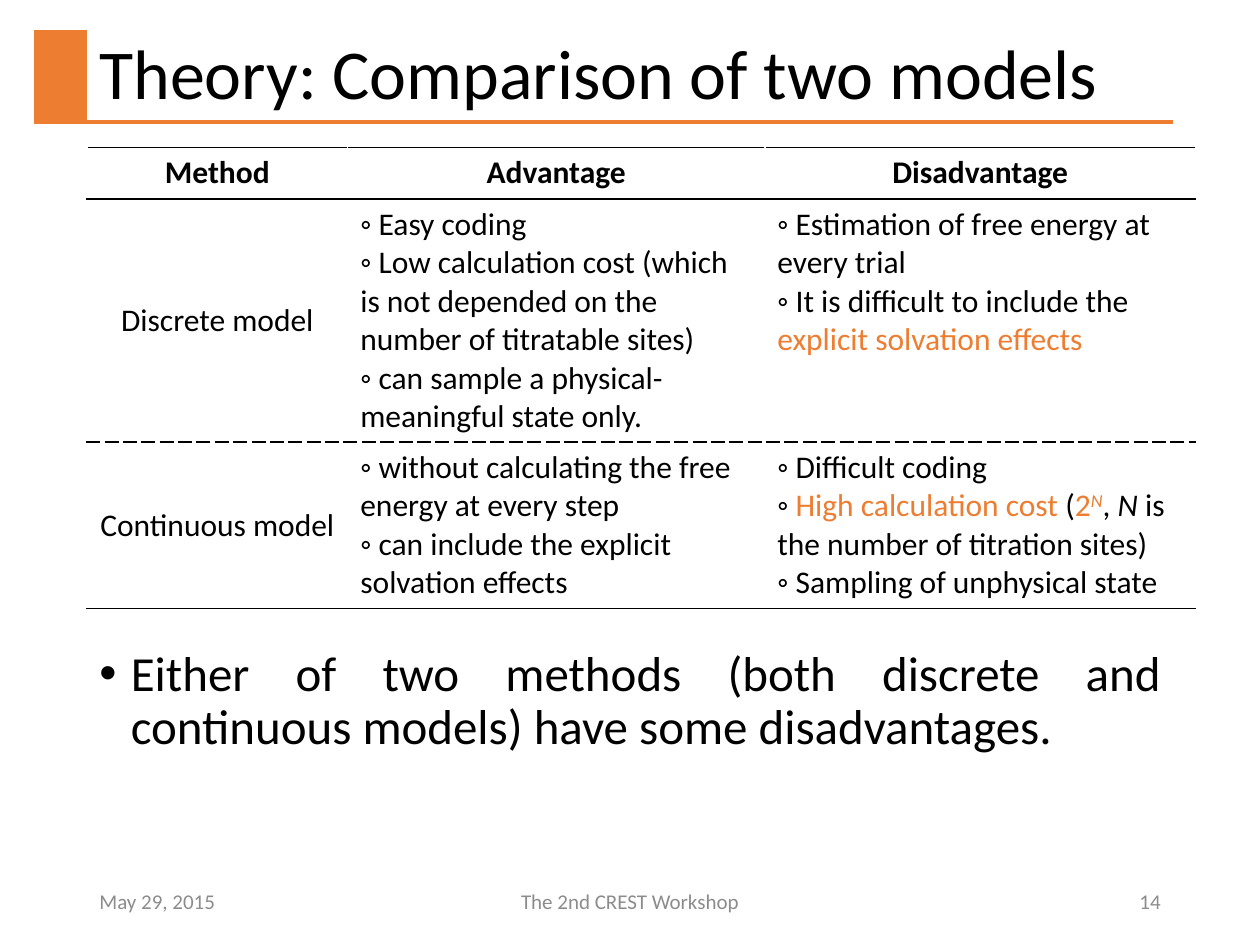
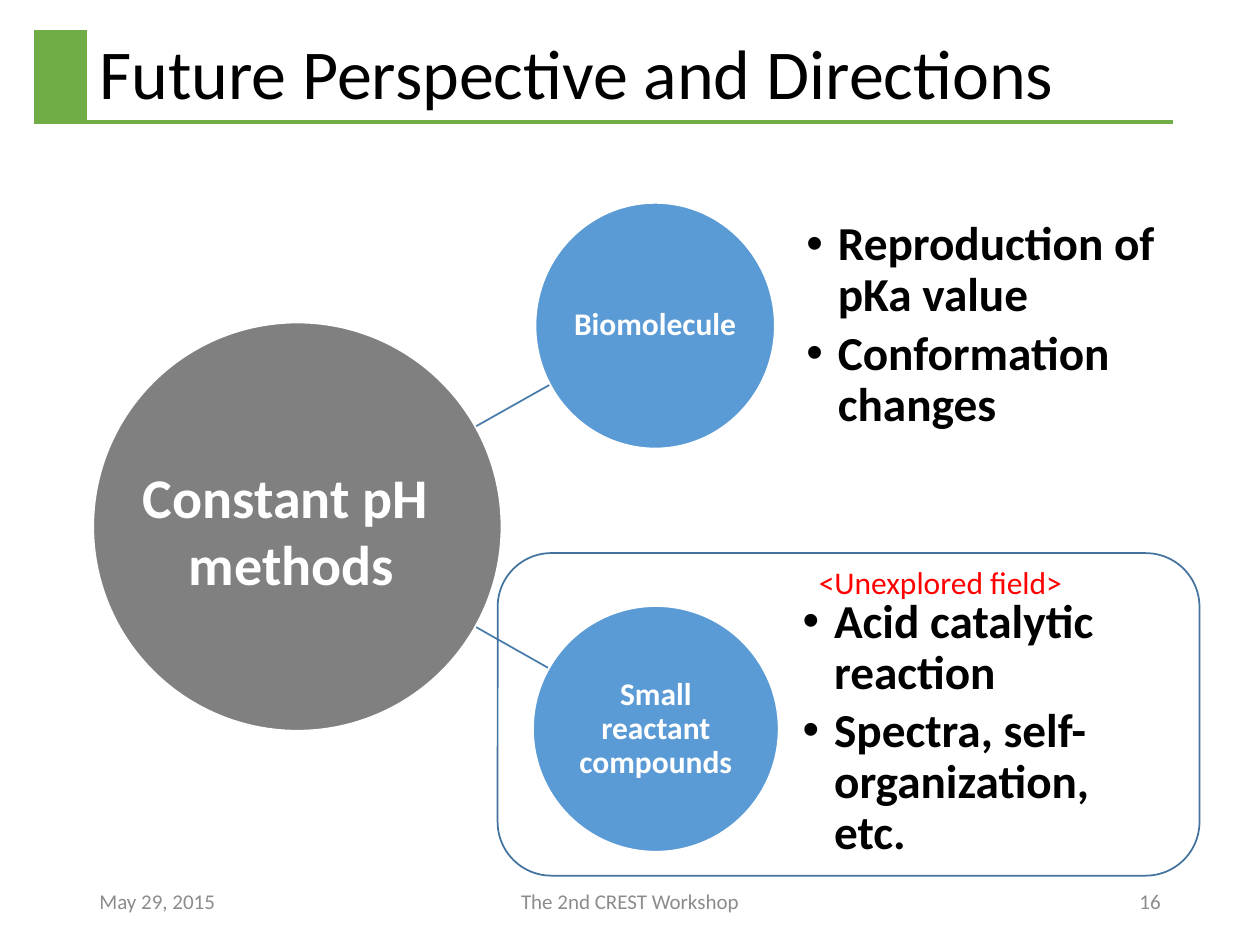
import pptx
import pptx.util
import pptx.dml.color
import pptx.enum.dml
import pptx.enum.shapes
import pptx.enum.text
import pptx.oxml.ns
import lxml.etree

Inches, Pt = pptx.util.Inches, pptx.util.Pt
SHAPE = pptx.enum.shapes.MSO_SHAPE
ALIGN = pptx.enum.text.PP_ALIGN
ANCHOR = pptx.enum.text.MSO_ANCHOR

FONT = "Calibri"
BLACK, WHITE, GREY, RED = "000000", "FFFFFF", "808080", "FF0000"
ORANGE, GREEN, BLUE = "ED7D31", "70AD47", "5B9BD5"
LINK, FRAME, FAINT = "497CAB", "43739E", "8C8C8C"
LEFT, WIDTH = 0.69, 8.62


def color(code):
    return pptx.dml.color.RGBColor.from_string(code)


def child(parent, tag, **attrs):
    node = lxml.etree.SubElement(parent, pptx.oxml.ns.qn(tag))
    for key, value in attrs.items():
        node.set(key, str(value))
    return node


def write(frame, paras, size=18, ink=BLACK, bold=False, align=ALIGN.LEFT,
          anchor=ANCHOR.TOP, inset=None, bullet=False, line=1.0,
          before=0, after=0, wrap=True):
    """Fill a text frame; a paragraph is a string or a list of (text, format) runs."""
    frame.word_wrap = wrap
    frame.vertical_anchor = anchor
    if inset is not None:
        frame.margin_left = frame.margin_right = Inches(inset)
        frame.margin_top = frame.margin_bottom = Inches(inset)
    for i, runs in enumerate(paras):
        para = frame.add_paragraph() if i else frame.paragraphs[0]
        para.alignment = align
        para.line_spacing = line
        para.space_before, para.space_after = Pt(before), Pt(after)
        if bullet:
            props = para._p.get_or_add_pPr()
            props.set("marL", str(Inches(0.25)))
            props.set("indent", str(-Inches(0.25)))
            child(props, "a:buFont", typeface="Arial")
            child(props, "a:buChar", char="•")
        for words, style in [(runs, {})] if isinstance(runs, str) else runs:
            run = para.add_run()
            run.text = words
            font = run.font
            font.name, font.size, font.bold = FONT, Pt(size), bold
            font.italic = style.get("italic", False)
            font.color.rgb = color(style.get("ink", ink))
            if "raised" in style:
                run._r.get_or_add_rPr().set("baseline", str(style["raised"] * 1000))


def text(slide, box, paras, **style):
    label = slide.shapes.add_textbox(*map(Inches, box))
    write(label.text_frame, paras, **style)


def shape(slide, kind, box, fill=None, edge=None):
    item = slide.shapes.add_shape(kind, *map(Inches, box))
    item.shadow.inherit = False
    if fill:
        item.fill.solid()
        item.fill.fore_color.rgb = color(fill)
    else:
        item.fill.background()
    if edge:
        item.line.color.rgb = color(edge)
        item.line.width = Pt(1)
    else:
        item.line.fill.background()
    return item


def rule(slide, start, end, ink, weight):
    item = slide.shapes.add_connector(
        pptx.enum.shapes.MSO_CONNECTOR.STRAIGHT, *map(Inches, start + end))
    item.line.color.rgb = color(ink)
    item.line.width = Pt(weight)
    child(item._element.spPr, "a:effectLst")


def base(deck, title, number, accent):
    """Title with its accent band, and the footer line."""
    slide = deck.slides.add_slide(deck.slide_layouts[6])
    top, high = 0.24, 0.74
    text(slide, (LEFT, top, WIDTH, high), [title], size=40,
         anchor=ANCHOR.MIDDLE, line=0.9)
    shape(slide, SHAPE.RECTANGLE, (0.27, top, 0.42, high), accent)
    rule(slide, (0.27, 0.97), (LEFT + WIDTH, 0.97), accent, 2)
    for left, wide, words, align in (
            (LEFT, 2.25, "May 29, 2015", ALIGN.LEFT),
            (3.31, 3.38, "The 2nd CREST Workshop", ALIGN.CENTER),
            (7.06, 2.25, number, ALIGN.RIGHT)):
        text(slide, (left, 6.95, wide, 0.4), [words], size=12, ink=FAINT,
             align=align, anchor=ANCHOR.MIDDLE)
    return slide


def border(cell, top, bottom):
    """White sides, black top and bottom in the given dash styles."""
    props = cell._tc.get_or_add_tcPr()
    sides = (("a:lnL", WHITE, "solid"), ("a:lnR", WHITE, "solid"),
             ("a:lnT", BLACK, top), ("a:lnB", BLACK, bottom))
    for tag, ink, dash in sides:
        edge = child(props, tag, w=Pt(1))
        child(child(edge, "a:solidFill"), "a:srgbClr", val=ink)
        child(edge, "a:prstDash", val=dash)


def matrix(slide, box, widths, heights, rows):
    """Table with a bold header and a centred first column."""
    grid = slide.shapes.add_table(len(rows), len(widths), *map(Inches, box)).table
    grid.first_row = grid.horz_banding = False
    for column, wide in zip(grid.columns, widths):
        column.width = Inches(wide)
    dashes = ["solid", "solid", "lgDash", "solid"]
    for r, row in enumerate(rows):
        grid.rows[r].height = Inches(heights[r])
        for c, paras in enumerate(row):
            cell = grid.cell(r, c)
            head, side = r == 0, c == 0
            write(cell.text_frame, paras, bold=head,
                  align=ALIGN.CENTER if head or side else ALIGN.LEFT)
            cell.vertical_anchor = ANCHOR.MIDDLE if side and not head else ANCHOR.TOP
            border(cell, dashes[r], dashes[r + 1])
            cell.fill.background()


def models(deck):
    slide = base(deck, "Theory: Comparison of two models", "14", ORANGE)
    hot, slant = {"ink": ORANGE}, {"italic": True}
    rows = [
        [["Method"], ["Advantage"], ["Disadvantage"]],
        [["Discrete model"],
         ["◦ Easy coding",
          "◦ Low calculation cost (which is not depended on the number of titratable sites)",
          "◦ can sample a physical-meaningful state only."],
         ["◦ Estimation of free energy at every trial",
          [("◦ It is difficult to include the ", {}),
           ("explicit solvation effects", hot)]]],
        [["Continuous model"],
         ["◦ without calculating the free energy at every step",
          "◦ can include the explicit solvation effects"],
         ["◦ Difficult coding",
          [("◦ ", {}), ("High calculation cost ", hot), ("(", {}), ("2", hot),
           ("N", {"ink": ORANGE, "italic": True, "raised": 30}), (", ", {}),
           ("N", slant), (" is the number of titration sites)", {})],
          "◦ Sampling of unphysical state"]],
    ]
    matrix(slide, (LEFT, 1.17, 8.8, 3.66), (2.07, 3.31, 3.42),
           (0.41, 1.93, 1.32), rows)
    text(slide, (LEFT, 5.1, WIDTH, 1.87),
         ["Either of two methods (both discrete and continuous models) "
          "have some disadvantages."],
         size=28, align=ALIGN.JUSTIFY, bullet=True, line=0.9, before=10)


def branch(slide, box, name, gap, wide, points):
    """Circle with its name, and a bullet list to its right."""
    left, top, across, high = box
    disc = shape(slide, SHAPE.OVAL, box, BLUE, WHITE)
    write(disc.text_frame, [name], ink=WHITE, bold=True, align=ALIGN.CENTER,
          anchor=ANCHOR.MIDDLE, inset=0.01, line=0.9)
    text(slide, (left + across + gap, top, wide, high), points, size=27,
         bold=True, anchor=ANCHOR.MIDDLE, inset=0, bullet=True, line=0.9, after=4)


def future(deck):
    slide = base(deck, "Future Perspective and Directions", "16", GREEN)
    # Links run from under the hub to each branch
    rule(slide, (3.5, 3.54), (4.37, 3.05), LINK, 1)
    rule(slide, (3.5, 4.82), (4.35, 5.3), LINK, 1)
    # Hub
    shape(slide, SHAPE.OVAL, (0.74, 2.56, 3.24, 3.24), GREY, WHITE)
    text(slide, (0.97, 3.62, 2.69, 1.18), ["Constant pH ", "methods"],
         size=32, ink=WHITE, bold=True, align=ALIGN.CENTER)
    # Branches
    branch(slide, (4.25, 1.61, 1.9, 1.95), "Biomolecule", 0.25, 2.86,
           ["Reproduction of pKa value", "Conformation changes"])
    branch(slide, (4.23, 4.81, 1.95, 1.95), "Small reactant compounds", 0.19, 2.92,
           ["Acid catalytic reaction", "Spectra, self-organization, etc."])
    # Frame round the new field
    text(slide, (6.4, 4.42, 2.16, 0.4), ["<Unexplored field>"], ink=RED, wrap=False)
    shape(slide, SHAPE.ROUNDED_RECTANGLE, (3.95, 4.39, 5.57, 2.56), edge=FRAME)


def main():
    deck = pptx.Presentation()
    deck.slide_width, deck.slide_height = Inches(10), Inches(7.5)
    models(deck)
    future(deck)
    deck.save("out.pptx")


if __name__ == "__main__":
    main()
